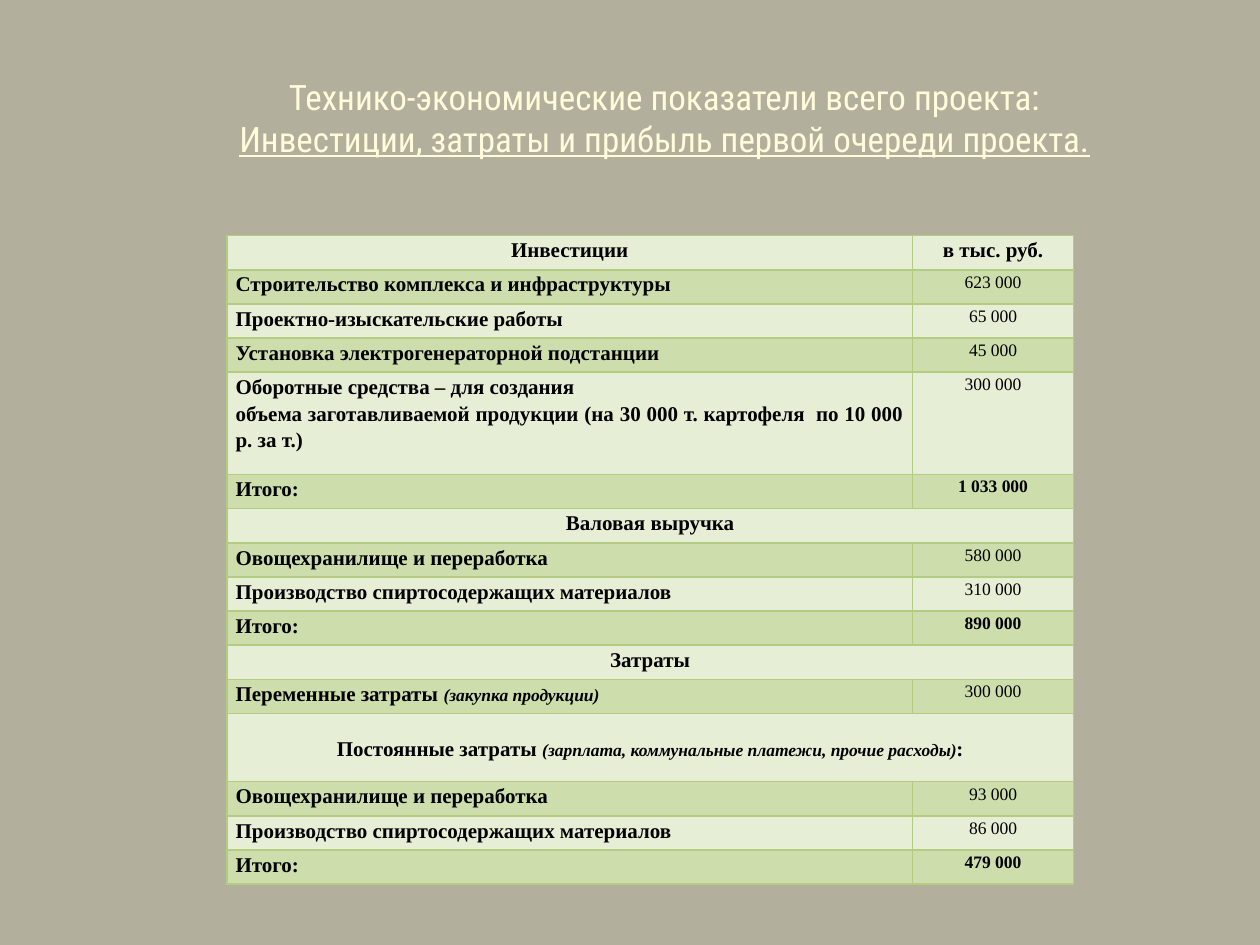
from lxml.etree import SubElement
from pptx import Presentation
from pptx.dml.color import RGBColor
from pptx.enum.text import MSO_ANCHOR, MSO_AUTO_SIZE, PP_ALIGN
from pptx.oxml.ns import qn
from pptx.util import Inches, Pt

HEAD, BODY = "Roboto Condensed", "Times New Roman"
BANDS = ["E6EED5", "CDDDAC"]
EDGE = "B3CC82"
TOTAL = "Итого:"
STORE = "Овощехранилище и переработка"
SPIRIT = "Производство спиртосодержащих материалов"

# Label lines as (text, note, tail), value (None spans the row), height in units
ROWS = [
    ([("Инвестиции",)], "в тыс. руб.", 1),
    ([("Строительство комплекса и инфраструктуры",)], "623 000", 1),
    ([("Проектно-изыскательские работы",)], "65 000", 1),
    ([("Установка электрогенераторной подстанции",)], "45 000", 1),
    ([("Оборотные средства – для создания",),
      ("объема заготавливаемой продукции (на 30 000 т. картофеля  по 10 000 р. за т.)",)],
     "300 000", 3),
    ([(TOTAL,)], "1 033 000", 1),
    ([("Валовая выручка",)], None, 1),
    ([(STORE,)], "580 000", 1),
    ([(SPIRIT,)], "310 000", 1),
    ([(TOTAL,)], "890 000", 1),
    ([("Затраты",)], None, 1),
    ([("Переменные затраты ", "(закупка продукции)")], "300 000", 1),
    ([("Постоянные затраты ", "(зарплата, коммунальные платежи, прочие расходы)", ":")],
     None, 2),
    ([(STORE,)], "93 000", 1),
    ([(SPIRIT,)], "86 000", 1),
    ([(TOTAL,)], "479 000", 1),
]


def paint(text):
    return RGBColor.from_string(text)


def style(run, face, size, tint, bold=False, slant=False):
    font = run.font
    font.name, font.size = face, Pt(size)
    font.bold, font.italic = bold, slant
    font.color.rgb = paint(tint)


def add_title(slide, left, top, width, height):
    title = slide.shapes.title
    title.left, title.top = Inches(left), Inches(top)
    title.width, title.height = Inches(width), Inches(height)
    frame = title.text_frame
    frame.text = ("Технико-экономические показатели всего проекта:\n"
                  "Инвестиции, затраты и прибыль первой очереди проекта.")
    frame.word_wrap = True
    frame.auto_size = MSO_AUTO_SIZE.NONE
    frame.vertical_anchor = MSO_ANCHOR.TOP
    for para in frame.paragraphs:
        para.alignment = PP_ALIGN.CENTER
        para.line_spacing = 1
        para.space_before = Pt(0)
        style(para.runs[0], HEAD, 20, "FFFBDB")
    frame.paragraphs[1].runs[0].font.underline = True


def dress(cell, tint):
    """Set the margins, borders and fill of a cell."""
    cell.margin_left = cell.margin_right = Inches(0.07)
    cell.margin_top = cell.margin_bottom = 0
    props = cell._tc.get_or_add_tcPr()
    for side in ("a:lnL", "a:lnR", "a:lnT", "a:lnB"):
        line = SubElement(props, qn(side), w=str(Pt(1)))
        fill = SubElement(line, qn("a:solidFill"))
        SubElement(fill, qn("a:srgbClr"), val=EDGE)
    cell.fill.solid()
    cell.fill.fore_color.rgb = paint(tint)


def write(cell, lines, align, size=12, bold=True):
    """Write lines of parts; the second part of a line is a small slanted note."""
    frame = cell.text_frame
    for row, parts in enumerate(lines):
        para = frame.add_paragraph() if row else frame.paragraphs[0]
        para.alignment = align
        para.line_spacing = 1.15
        for spot, text in enumerate(parts):
            run = para.add_run()
            run.text = text
            note = spot == 1
            style(run, BODY, 10 if note else size, "000000", bold, note)


def add_costs(slide, left, top, width, height):
    frame = slide.shapes.add_table(len(ROWS), 2, Inches(left), Inches(top),
                                   Inches(width), Inches(height))
    table = frame.table
    table.first_row = table.horz_banding = False
    for column, share in zip(table.columns, (0.81, 0.19)):
        column.width = Inches(width * share)
    unit = height / sum(units for _, _, units in ROWS)
    for row, (lines, value, units) in enumerate(ROWS):
        table.rows[row].height = Inches(unit * units)
        label, sum_cell = table.cell(row, 0), table.cell(row, 1)
        for cell in (label, sum_cell):
            dress(cell, BANDS[row % 2])
        if value is None:
            label.merge(sum_cell)
            label.vertical_anchor = MSO_ANCHOR.MIDDLE if units > 1 else MSO_ANCHOR.TOP
        else:
            strong = row == 0 or lines[0][0] == TOTAL
            write(sum_cell, [(value,)], PP_ALIGN.CENTER, 10 if row else 12, strong)
        middle = row == 0 or value is None
        write(label, lines, PP_ALIGN.CENTER if middle else PP_ALIGN.JUSTIFY)


def main():
    deck = Presentation()
    deck.slide_width, deck.slide_height = Inches(10), Inches(7.5)
    slide = deck.slides.add_slide(deck.slide_layouts[5])
    back = slide.background.fill
    back.solid()
    back.fore_color.rgb = paint("B2B09C")
    add_title(slide, 0.55, 0.55, 9.45, 1.02)
    add_costs(slide, 1.8, 1.87, 6.72, 5.15)
    deck.save("out.pptx")


if __name__ == "__main__":
    main()
